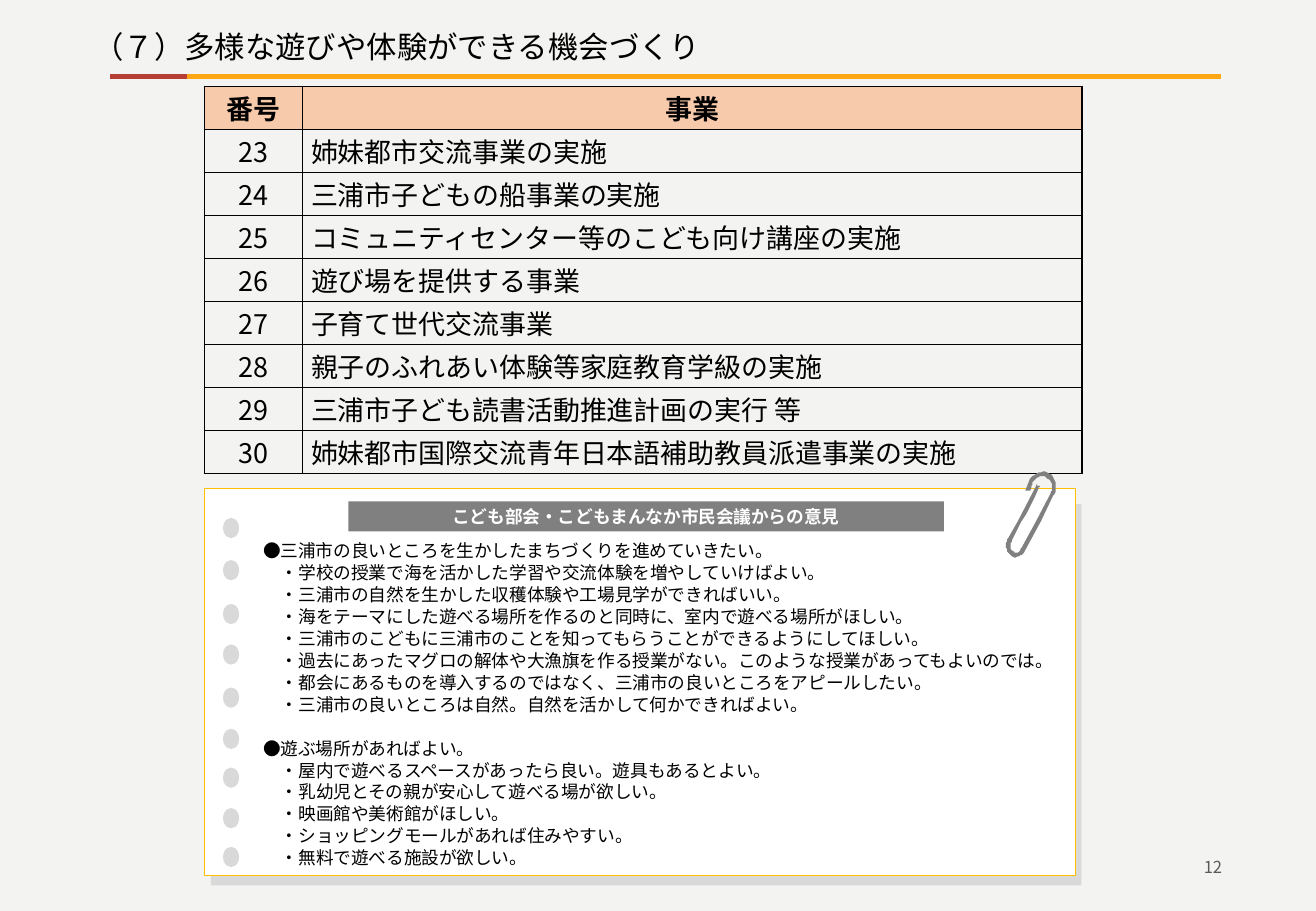
from pptx import Presentation
from pptx.dml.color import RGBColor
from pptx.enum.shapes import MSO_CONNECTOR, MSO_SHAPE
from pptx.enum.text import MSO_ANCHOR, PP_ALIGN
from pptx.oxml.ns import qn
from pptx.util import Pt
from lxml.etree import SubElement

BLACK = RGBColor(0x00, 0x00, 0x00)
WHITE = RGBColor(0xFF, 0xFF, 0xFF)
PAPER = RGBColor(0xF3, 0xF3, 0xF2)
PEACH = RGBColor(0xF7, 0xCA, 0xAC)
ORANGE = RGBColor(0xFF, 0xA6, 0x15)
RED = RGBColor(0xB7, 0x3E, 0x35)
GOLD = RGBColor(0xFF, 0xC0, 0x00)
SILVER = RGBColor(0xD9, 0xD9, 0xD9)
GRAY = RGBColor(0x80, 0x80, 0x80)
DIM = RGBColor(0x59, 0x59, 0x59)

JAPANESE = "Noto Sans CJK JP"

PROJECTS = [
    "姉妹都市交流事業の実施",
    "三浦市子どもの船事業の実施",
    "コミュニティセンター等のこども向け講座の実施",
    "遊び場を提供する事業",
    "子育て世代交流事業",
    "親子のふれあい体験等家庭教育学級の実施",
    "三浦市子ども読書活動推進計画の実行 等",
    "姉妹都市国際交流青年日本語補助教員派遣事業の実施",
]
FIRST_NUMBER = 23

OPINIONS = {
    "●三浦市の良いところを生かしたまちづくりを進めていきたい。": [
        "・学校の授業で海を活かした学習や交流体験を増やしていけばよい。",
        "・三浦市の自然を生かした収穫体験や工場見学ができればいい。",
        "・海をテーマにした遊べる場所を作るのと同時に、室内で遊べる場所がほしい。",
        "・三浦市のこどもに三浦市のことを知ってもらうことができるようにしてほしい。",
        "・過去にあったマグロの解体や大漁旗を作る授業がない。このような授業があってもよいのでは。",
        "・都会にあるものを導入するのではなく、三浦市の良いところをアピールしたい。",
        "・三浦市の良いところは自然。自然を活かして何かできればよい。",
    ],
    "●遊ぶ場所があればよい。": [
        "・屋内で遊べるスペースがあったら良い。遊具もあるとよい。",
        "・乳幼児とその親が安心して遊べる場が欲しい。",
        "・映画館や美術館がほしい。",
        "・ショッピングモールがあれば住みやすい。",
        "・無料で遊べる施設が欲しい。",
    ],
}

HOLE_TOPS = [307, 332, 358, 382, 407.5, 432, 455, 479, 502]

# Hundredths of an inch; one point is a straight step, three are a curve
CLIP_START = (869, 399)
CLIP_STEPS = [
    [(869, 396), (867, 392), (864, 390)], [(861, 388), (858, 388), (855, 389)],
    [(852, 390), (850, 392), (848, 394)], [(844, 404)], [(848, 404)],
    [(849, 401), (850, 398), (851, 396)], [(852, 394), (854, 393), (856, 392)],
    [(858, 392), (860, 392), (862, 394)], [(865, 395), (866, 397), (866, 400)],
    [(866, 402), (866, 404), (865, 406)], [(853, 429)], [(841, 451)],
    [(840, 453), (839, 454), (838, 455)], [(836, 455), (835, 455), (834, 454)],
    [(833, 453), (832, 452), (832, 450)], [(832, 449), (832, 447), (833, 445)],
    [(841, 429)], [(845, 423)], [(852, 409)], [(855, 402)],
    [(856, 401), (856, 400), (855, 400)], [(854, 399), (853, 399), (853, 400)],
    [(838, 429)], [(830, 443)],
    [(829, 445), (828, 448), (828, 451)], [(829, 453), (830, 456), (832, 457)],
    [(834, 459), (837, 459), (839, 458)], [(841, 457), (843, 456), (844, 453)],
    [(857, 429)], [(867, 408)], [(869, 406), (870, 402), (869, 399)],
]


def flatten(start, steps, pieces=5):
    """Turn straight and cubic steps into a list of points."""
    points = [start]
    for step in steps:
        if len(step) == 1:
            points += step
            continue
        knots = [points[-1], *step]
        for t in (i / pieces for i in range(1, pieces + 1)):
            weights = ((1 - t) ** 3, 3 * t * (1 - t) ** 2, 3 * t * t * (1 - t), t ** 3)
            points.append(tuple(sum(w * knot[axis] for w, knot in zip(weights, knots))
                                for axis in (0, 1)))
    return points


class SlideBuilder:
    def __init__(self, slide, font=JAPANESE):
        self.slide = slide
        self.shapes = slide.shapes
        self.font = font

    def add_text(self, paragraph, text, size, color=BLACK, bold=False, font=None, **layout):
        run = paragraph.add_run()
        run.text = text
        formats = {"size": Pt(size), "bold": bold, "name": font or self.font}
        for key, value in formats.items():
            setattr(run.font, key, value)
        run.font.color.rgb = color
        latin = run.font._element.find(qn("a:latin"))
        east_asian = latin.makeelement(qn("a:ea"), {"typeface": JAPANESE})
        latin.addnext(east_asian)
        for key, value in layout.items():
            setattr(paragraph, key, value)

    def box(self, left, top, width, height, anchor=MSO_ANCHOR.TOP):
        frame = self.shapes.add_textbox(Pt(left), Pt(top), Pt(width), Pt(height)).text_frame
        frame.word_wrap = True
        frame.vertical_anchor = anchor
        return frame

    def paint(self, shape, fill, line=None):
        shape.shadow.inherit = False
        shape.fill.solid()
        shape.fill.fore_color.rgb = fill
        if line is None:
            shape.line.fill.background()
        else:
            shape.line.color.rgb = line
            shape.line.width = Pt(0.5)
        return shape

    def shape(self, kind, left, top, width, height, fill, line=None):
        shape = self.shapes.add_shape(kind, Pt(left), Pt(top), Pt(width), Pt(height))
        return self.paint(shape, fill, line)

    def outline(self, points, fill):
        """Draw a closed outline given in hundredths of an inch."""
        builder = self.shapes.build_freeform(*points[0], scale=Pt(0.72))
        builder.add_line_segments(points[1:], close=True)
        return self.paint(builder.convert_to_shape(), fill)

    def rule(self, left, right, y, color):
        rule = self.shapes.add_connector(MSO_CONNECTOR.STRAIGHT,
                                         Pt(left), Pt(y), Pt(right), Pt(y))
        rule.line.color.rgb = color
        rule.line.width = Pt(3)
        SubElement(rule._element.spPr, qn("a:effectLst"))

    def table(self, left, top, widths, row_height, rows):
        table = self.shapes.add_table(len(rows), len(widths), Pt(left), Pt(top),
                                      Pt(sum(widths)), Pt(row_height * len(rows))).table
        table.horz_banding = table.first_row = False
        for column, width in zip(table.columns, widths):
            column.width = Pt(width)
        for r, row in enumerate(rows):
            table.rows[r].height = Pt(row_height)
            for c, text in enumerate(row):
                header = r == 0
                centred = header or c == 0
                self.cell(table.cell(r, c), text, header,
                          PP_ALIGN.CENTER if centred else PP_ALIGN.LEFT)

    def cell(self, cell, text, header, alignment):
        formats = {"margin_left": Pt(5), "margin_right": Pt(5), "margin_top": 0,
                   "margin_bottom": 0, "vertical_anchor": MSO_ANCHOR.MIDDLE}
        for key, value in formats.items():
            setattr(cell, key, value)
        self.add_text(cell.text_frame.paragraphs[0], text, 16, bold=header, alignment=alignment)
        properties = cell._tc.get_or_add_tcPr()
        for side in ("lnL", "lnR", "lnT", "lnB"):
            border = SubElement(properties, qn(f"a:{side}"), w=str(Pt(1)))
            solid = SubElement(border, qn("a:solidFill"))
            SubElement(solid, qn("a:srgbClr"), val=str(BLACK))
        if header:
            cell.fill.solid()
            cell.fill.fore_color.rgb = PEACH
        else:
            cell.fill.background()


def main():
    deck = Presentation()
    deck.slide_width, deck.slide_height = Pt(780), Pt(540)
    slide = deck.slides.add_slide(deck.slide_layouts[6])
    slide.background.fill.solid()
    slide.background.fill.fore_color.rgb = PAPER
    page = SlideBuilder(slide)

    number = page.box(551, 502.5, 180.5, 22.5, MSO_ANCHOR.MIDDLE)
    page.add_text(number.paragraphs[0], "12", 9.8, DIM, alignment=PP_ALIGN.RIGHT)

    title = page.box(37.5, 13, 715, 29, MSO_ANCHOR.MIDDLE).paragraphs[0]
    title._p.get_or_add_pPr().set("indent", str(Pt(10.8)))
    page.add_text(title, "（", 18)
    page.add_text(title, "７）多様な遊びや体験ができる機会づくり", 18, font="Arial")

    projects = [(str(n), name) for n, name in enumerate(PROJECTS, FIRST_NUMBER)]
    page.table(121.2, 51.2, [58.2, 462], 25.5, [("番号", "事業"), *projects])
    page.rule(67, 723.6, 45.3, ORANGE)
    page.rule(65.5, 111, 45.3, RED)

    page.shape(MSO_SHAPE.RECTANGLE, 125, 298.8, 516, 226, SILVER)
    page.shape(MSO_SHAPE.RECTANGLE, 121.2, 289.4, 516.2, 229.6, WHITE, GOLD)
    heading = page.shape(MSO_SHAPE.RECTANGLE, 206.5, 297.2, 353, 17.8, GRAY).text_frame
    for side in ("left", "top", "right", "bottom"):
        setattr(heading, f"margin_{side}", 0)
    heading.vertical_anchor = MSO_ANCHOR.MIDDLE
    page.add_text(heading.paragraphs[0], "こども部会・こどもまんなか市民会議からの意見", 10.5,
                  WHITE, True, "Calibri", alignment=PP_ALIGN.CENTER)
    page.outline(flatten(CLIP_START, CLIP_STEPS), GRAY)
    for top in HOLE_TOPS:
        page.shape(MSO_SHAPE.OVAL, 132.2, top, 9.5, 12, SILVER)

    opinions = page.box(149, 316, 499, 204)
    paragraph = opinions.paragraphs[0]
    layout = {"alignment": PP_ALIGN.JUSTIFY, "line_spacing": Pt(13)}
    for group, (theme, wishes) in enumerate(OPINIONS.items()):
        if group:
            paragraph = opinions.add_paragraph()
        page.add_text(paragraph, theme, 10.5, space_before=Pt(13 * group), **layout)
        for wish in wishes:
            item = opinions.add_paragraph()
            page.add_text(item, wish, 10.5, **layout)
            item._p.get_or_add_pPr().set("marL", str(Pt(10.5)))

    deck.save("out.pptx")


if __name__ == "__main__":
    main()
